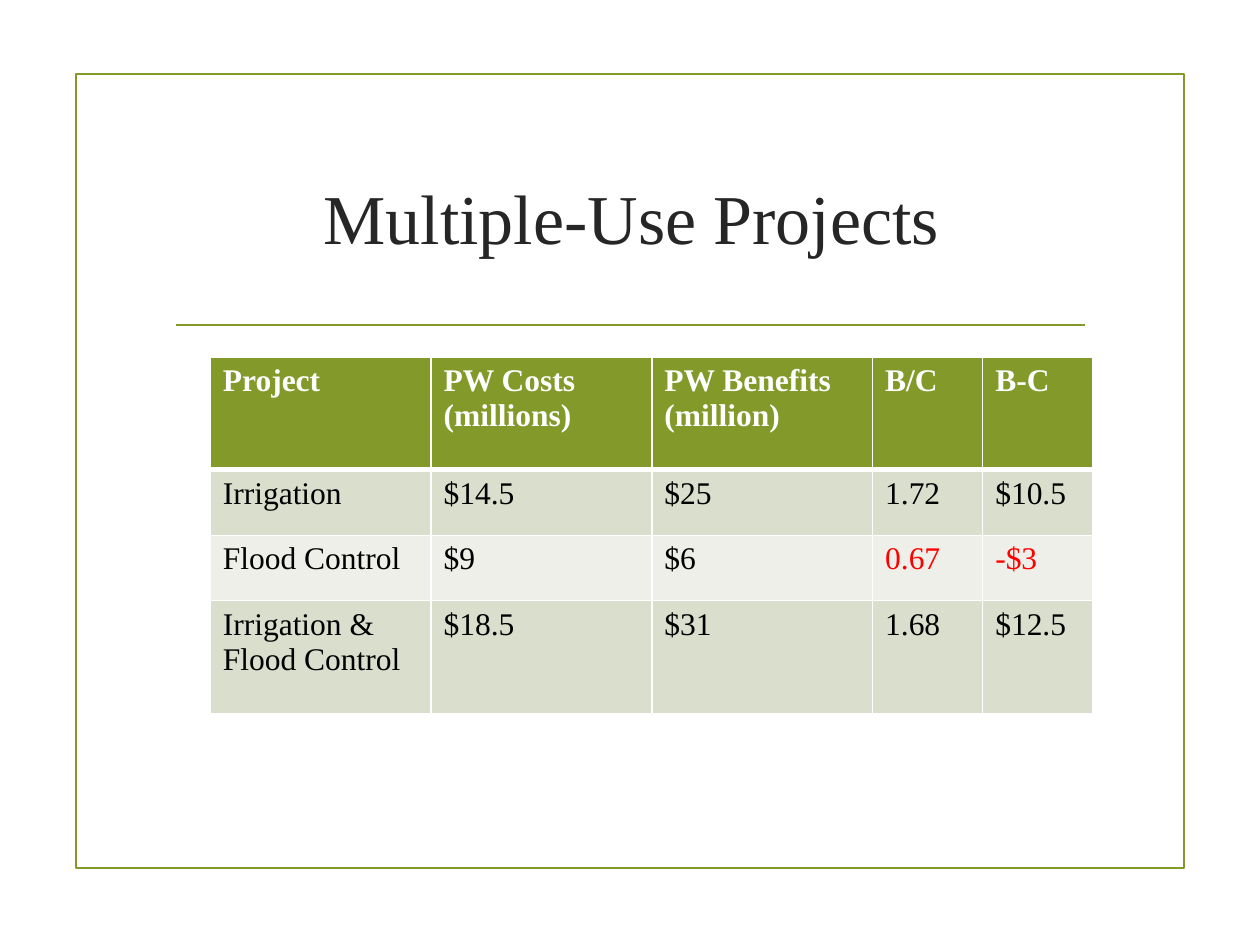
"""Build the Multiple-Use Projects slide with its benefit-cost table."""
from lxml import etree
from pptx import Presentation
from pptx.dml.color import RGBColor
from pptx.enum import shapes, text
from pptx.oxml import ns
from pptx.util import Cm, Pt

TITLE = "Multiple-Use Projects"
ROWS = [
    ("Project", "PW Costs (millions)", "PW Benefits (million)", "B/C", "B-C"),
    ("Irrigation", "$14.5", "$25", "1.72", "$10.5"),
    ("Flood Control", "$9", "$6", "0.67", "-$3"),
    ("Irrigation & Flood Control", "$18.5", "$31", "1.68", "$12.5"),
]
LOSSES = {"0.67", "-$3"}
COLUMN_WIDTHS = [4.45, 4.45, 4.45, 2.22, 2.22]
ROW_HEIGHTS = [2.27, 1.32, 1.32, 2.27]

FONT = "Times New Roman"
GREEN = RGBColor(0x83, 0x99, 0x2A)
DARK = RGBColor(0x26, 0x26, 0x26)
BLACK = RGBColor(0, 0, 0)
WHITE = RGBColor(0xFF, 0xFF, 0xFF)
RED = RGBColor(0xFF, 0, 0)
BANDS = [RGBColor(0xED, 0xEF, 0xE8), RGBColor(0xD9, 0xDE, 0xCD)]


def style(para, size, color, bold=False):
    font = para.font
    font.name, font.size, font.bold = FONT, Pt(size), bold
    font.color.rgb = color


def add_frame(page):
    frame = page.shapes.add_shape(
        shapes.MSO_SHAPE.RECTANGLE, Cm(1.54), Cm(1.5), Cm(22.33), Cm(16))
    frame.shadow.inherit = False
    frame.fill.background()
    rule = page.shapes.add_connector(
        shapes.MSO_CONNECTOR.STRAIGHT, Cm(3.55), Cm(6.55), Cm(21.88), Cm(6.55))
    etree.SubElement(rule._element.spPr, ns.qn("a:effectLst"))
    for outline in (frame.line, rule.line):
        outline.color.rgb = GREEN
        outline.width = Pt(1.25)


def add_title(page):
    box = page.shapes.add_textbox(Cm(3.28), Cm(2.54), Cm(18.9), Cm(3.63))
    box.text_frame.word_wrap = True
    box.text_frame.vertical_anchor = text.MSO_ANCHOR.MIDDLE
    para = box.text_frame.paragraphs[0]
    para.text = TITLE
    para.alignment = text.PP_ALIGN.CENTER
    style(para, 40, DARK)


def set_borders(cell, **widths):
    properties = cell._tc.get_or_add_tcPr()
    for side, width in widths.items():
        line = etree.SubElement(properties, ns.qn(f"a:ln{side}"), w=str(Pt(width)))
        fill = etree.SubElement(line, ns.qn("a:solidFill"))
        etree.SubElement(fill, ns.qn("a:srgbClr"), val=str(WHITE))


def add_project_table(page):
    table = page.shapes.add_table(
        len(ROWS), len(COLUMN_WIDTHS), Cm(4.24), Cm(7.2),
        Cm(sum(COLUMN_WIDTHS)), Cm(sum(ROW_HEIGHTS))).table
    for column, width in zip(table.columns, COLUMN_WIDTHS):
        column.width = Cm(width)
    for row, height in zip(table.rows, ROW_HEIGHTS):
        row.height = Cm(height)
    for r, values in enumerate(ROWS):
        header = r == 0
        for cell, value in zip(table.rows[r].cells, values):
            set_borders(cell, L=1, R=1, T=3 if r == 1 else 1, B=3 if header else 1)
            cell.fill.solid()
            cell.fill.fore_color.rgb = GREEN if header else BANDS[r % 2]
            cell.text = value
            color = WHITE if header else RED if value in LOSSES else BLACK
            style(cell.text_frame.paragraphs[0], 18, color, bold=header)


def main():
    deck = Presentation()
    deck.slide_width, deck.slide_height = Cm(25.4), Cm(19.05)
    page = deck.slides.add_slide(deck.slide_layouts[6])
    add_frame(page)
    add_title(page)
    add_project_table(page)
    deck.save("out.pptx")


if __name__ == "__main__":
    main()
